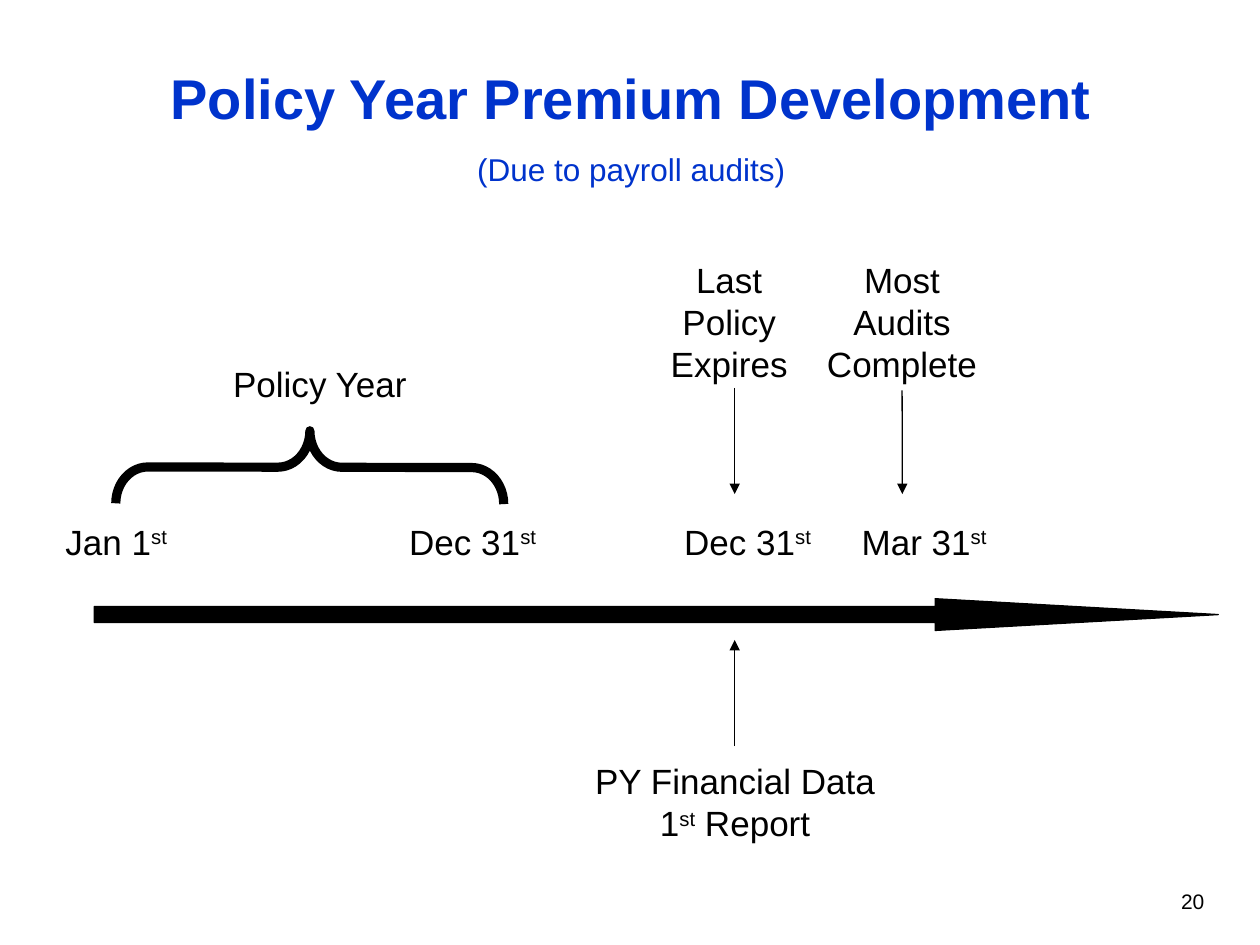
import pptx
import pptx.util
import pptx.dml.color
import pptx.enum.shapes
import pptx.enum.text
import pptx.oxml.ns
from lxml import etree

Cm, Pt = pptx.util.Cm, pptx.util.Pt
SHAPE = pptx.enum.shapes.MSO_SHAPE
ALIGN = pptx.enum.text.PP_ALIGN
AUTO_SIZE = pptx.enum.text.MSO_AUTO_SIZE


def color(hex_value):
    return pptx.dml.color.RGBColor.from_string(hex_value)


class TimelineSlide:
    FONT, INK, ACCENT = "Arial", "000000", "0033CC"

    def __init__(self, slide):
        self.slide = slide

    def style(self, font, size, ink, bold=False):
        font.name, font.size, font.bold = self.FONT, Pt(size), bold
        font.color.rgb = color(ink)

    def title(self, box, heading, subtitle):
        title = self.slide.shapes.title
        title.left, title.top, title.width, title.height = map(Cm, box)
        frame = title.text_frame
        frame.auto_size = AUTO_SIZE.NONE
        frame.vertical_anchor = pptx.enum.text.MSO_ANCHOR.MIDDLE
        frame.text = f"{heading}\n{subtitle}"
        for paragraph, size, bold in zip(frame.paragraphs, (32, 18), (True, False)):
            paragraph.alignment = ALIGN.CENTER
            self.style(paragraph.runs[0].font, size, self.ACCENT, bold)
        frame.paragraphs[1].space_before = Pt(11)

    def text(self, box, lines, align=ALIGN.LEFT, size=20):
        """Write one paragraph per line; text between ^ marks is superscript."""
        label = self.slide.shapes.add_textbox(*map(Cm, box))
        frame = label.text_frame
        frame.word_wrap = True
        for index, line in enumerate(lines):
            paragraph = frame.add_paragraph() if index else frame.paragraphs[0]
            paragraph.alignment = align
            for part, words in enumerate(line.split("^")):
                if not words:
                    continue
                run = paragraph.add_run()
                run.text = words
                self.style(run.font, size, self.INK)
                if part % 2:
                    run._r.get_or_add_rPr().set("baseline", "30000")
        return label

    def shape(self, kind, box, adjustments, line_width, filled):
        shape = self.slide.shapes.add_shape(kind, *map(Cm, box))
        for index, value in enumerate(adjustments):
            shape.adjustments[index] = value
        shape.shadow.inherit = False
        if filled:
            shape.fill.solid()
            shape.fill.fore_color.rgb = color(self.INK)
        else:
            shape.fill.background()
        shape.line.color.rgb = color(self.INK)
        shape.line.width = Pt(line_width)
        return shape

    def pointer(self, x, start, end, source=None):
        arrow = self.slide.shapes.add_connector(
            pptx.enum.shapes.MSO_CONNECTOR.STRAIGHT, Cm(x), Cm(start), Cm(x), Cm(end))
        if source is not None:
            arrow.begin_connect(source, 2)
        arrow.line.color.rgb = color(self.INK)
        arrow.line.width = Pt(0.75)
        head = etree.SubElement(arrow.line._get_or_add_ln(), pptx.oxml.ns.qn("a:tailEnd"))
        head.set("type", "triangle")
        etree.SubElement(arrow._element.spPr, pptx.oxml.ns.qn("a:effectLst"))


def main():
    presentation = pptx.Presentation()
    presentation.slide_width, presentation.slide_height = Cm(25.4), Cm(19.05)
    timeline = TimelineSlide(
        presentation.slides.add_slide(presentation.slide_layouts[5]))

    # Title and slide number
    timeline.title((0.56, 0.84, 24.33, 3.38),
                   "Policy Year Premium Development", "(Due to payroll audits)")
    timeline.text((19.25, 17.78, 5.28, 1.27), ["20"], ALIGN.RIGHT, 12)

    # Time axis with its dates
    timeline.shape(SHAPE.RIGHT_ARROW, (1.9, 12.07, 22.66, 0.64), (0.5, 8.917), 0.75, True)
    for left, width, date in ((1.07, 3.38, "Jan 1^st^"), (8, 3.86, "Dec 31^st^"),
                              (13.54, 3.61, "Dec 31^st^"), (17.12, 3.84, "Mar 31^st^")):
        timeline.text((left, 10.36, width, 1.09), [date])

    # Policy year span
    brace = timeline.shape(SHAPE.LEFT_BRACE, (5.51, 5.51, 1.47, 7.82), (0.44, 0.5), 5.25, False)
    brace.rotation = 90.1
    timeline.text((4.45, 7.19, 4.45, 1.09), ["Policy Year"])

    # Events above the axis
    expiry_x, audits_x = 14.81, 18.19
    timeline.text((13.11, 5.08, 3.18, 2.79), ["Last Policy Expires"], ALIGN.CENTER)
    timeline.pointer(expiry_x, 7.82, 9.96)
    audits = timeline.text((16.28, 5.08, 3.81, 2.79), ["Most", "Audits Complete"], ALIGN.CENTER)
    timeline.pointer(audits_x, 7.82, 9.96, audits)

    # First report below the axis
    timeline.text((11.43, 15.19, 6.78, 1.96),
                  ["PY Financial Data", "1^st^ Report"], ALIGN.CENTER)
    timeline.pointer(expiry_x, 15.04, 12.9)

    presentation.save("out.pptx")


if __name__ == "__main__":
    main()
